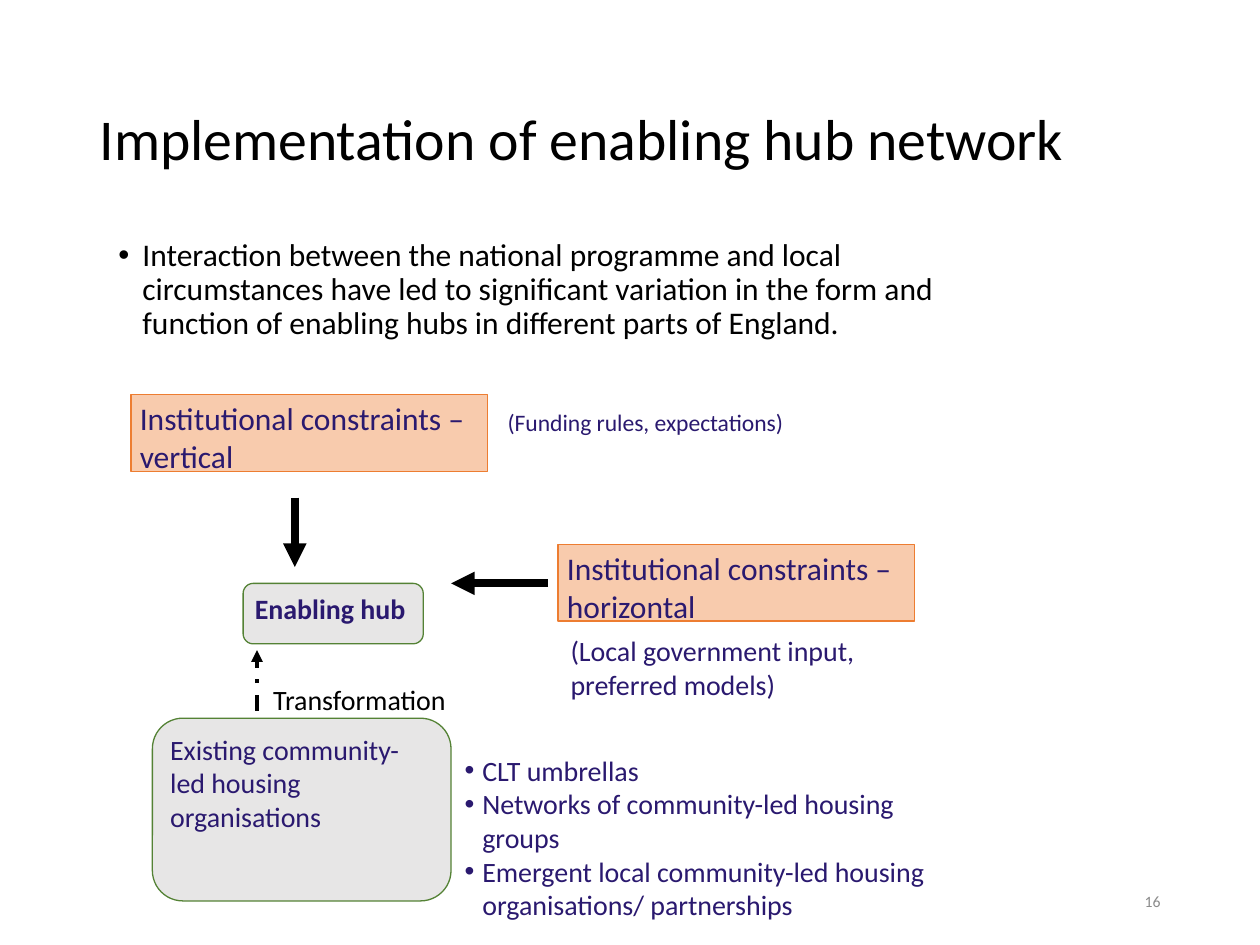
import pptx
import pptx.dml.color
import pptx.enum.dml
import pptx.enum.shapes
import pptx.enum.text
import pptx.oxml.ns
import pptx.util
from lxml import etree

Inches = pptx.util.Inches
Pt = pptx.util.Pt
Shape = pptx.enum.shapes.MSO_SHAPE
Align = pptx.enum.text.PP_ALIGN
Anchor = pptx.enum.text.MSO_ANCHOR
qn = pptx.oxml.ns.qn

BLACK, NAVY, GREY = "000000", "2A196F", "8C8C8C"
PEACH, ORANGE = "F8CBAD", "ED7D31"
SILVER, GREEN = "E7E6E6", "548235"


def color(hex_string):
    return pptx.dml.color.RGBColor.from_string(hex_string)


class HubSlide:
    font = "Calibri"

    def __init__(self, slide):
        self.slide = slide

    def fill_text(self, frame, lines, size, ink, bold=False, align=Align.LEFT,
                  anchor=Anchor.TOP, indent=None, spacing=None, before=0):
        """Fill a text frame, one paragraph per line; an indent makes bullets."""
        frame.word_wrap = True
        frame.auto_size = pptx.enum.text.MSO_AUTO_SIZE.NONE
        frame.vertical_anchor = anchor
        for number, line in enumerate(lines):
            paragraph = frame.add_paragraph() if number else frame.paragraphs[0]
            paragraph.alignment = align
            paragraph.line_spacing = spacing
            paragraph.space_before = Pt(before)
            if indent:
                self.bullet(paragraph, indent)
            run = paragraph.add_run()
            run.text = line
            run.font.name = self.font
            run.font.size = Pt(size)
            run.font.bold = bold
            run.font.color.rgb = color(ink)

    def bullet(self, paragraph, indent):
        properties = paragraph._p.get_or_add_pPr()
        properties.set("marL", str(Inches(indent)))
        properties.set("indent", str(-Inches(indent)))
        etree.SubElement(properties, qn("a:buFont"), typeface="Arial")
        etree.SubElement(properties, qn("a:buChar"), char="•")

    def placeholder(self, index, box, line, size, **style):
        holder = self.slide.placeholders[index]
        holder.left, holder.top, holder.width, holder.height = map(Inches, box)
        self.fill_text(holder.text_frame, [line], size, BLACK, spacing=0.9, **style)

    def label(self, box, lines, size, ink=NAVY, **style):
        textbox = self.slide.shapes.add_textbox(*map(Inches, box))
        self.fill_text(textbox.text_frame, lines, size, ink, **style)

    def block(self, kind, box, line, size, fill, outline, bold=False):
        block = self.slide.shapes.add_shape(kind, *map(Inches, box))
        block.shadow.inherit = False
        block.fill.solid()
        block.fill.fore_color.rgb = color(fill)
        block.line.color.rgb = color(outline)
        block.line.width = Pt(0.75)
        frame = block.text_frame
        frame.margin_left = frame.margin_right = Inches(0.07)
        frame.margin_top = frame.margin_bottom = Inches(0.04)
        self.fill_text(frame, [line], size, NAVY, bold=bold)

    def arrow(self, start, end, width, dash=None):
        arrow = self.slide.shapes.add_connector(
            pptx.enum.shapes.MSO_CONNECTOR.STRAIGHT, *map(Inches, start + end))
        arrow.line.color.rgb = color(BLACK)
        arrow.line.width = Pt(width)
        if dash:
            arrow.line.dash_style = dash
        properties = arrow._element.spPr
        etree.SubElement(properties.find(qn("a:ln")), qn("a:tailEnd"), type="triangle")
        etree.SubElement(properties, qn("a:effectLst"))


def main():
    deck = pptx.Presentation()
    deck.slide_width, deck.slide_height = Inches(10), Inches(7.5)
    hub = HubSlide(deck.slides.add_slide(deck.slide_layouts[1]))

    hub.placeholder(0, (0.69, 0.4, 8.62, 1.45),
                    "Implementation of enabling hub network", 33, anchor=Anchor.MIDDLE)
    hub.placeholder(1, (0.84, 1.85, 7.02, 3.38),
                    "Interaction between the national programme and local circumstances "
                    "have led to significant variation in the form and function of "
                    "enabling hubs in different parts of England.",
                    18, indent=0.19, before=7.5)
    hub.label((7.06, 6.95, 2.25, 0.4), ["16"], 9, GREY,
              align=Align.RIGHT, anchor=Anchor.MIDDLE)

    for direction, left, top in (("vertical", 1.04, 3.13), ("horizontal", 4.43, 4.32)):
        hub.block(Shape.RECTANGLE, (left, top, 2.83, 0.61),
                  f"Institutional constraints – {direction}", 18, PEACH, ORANGE)
    hub.arrow((4.35, 4.63), (3.58, 4.63), 4.5)
    hub.arrow((2.34, 3.95), (2.34, 4.5), 4.5)
    hub.block(Shape.ROUNDED_RECTANGLE, (1.93, 4.63, 1.43, 0.48),
              "Enabling hub", 16, SILVER, GREEN, bold=True)
    hub.label((3.93, 3.19, 2.39, 0.56), ["(Funding rules, expectations)"], 13.5)
    hub.label((4.43, 4.98, 2.83, 0.64), ["(Local government input, preferred models)"], 16)

    hub.block(Shape.ROUNDED_RECTANGLE, (1.21, 5.7, 2.37, 1.45),
              "Existing community-led housing organisations", 16, SILVER, GREEN)
    hub.arrow((2.04, 5.64), (2.04, 5.16), 2.25, pptx.enum.dml.MSO_LINE.DASH_DOT)
    hub.label((2.07, 5.37, 1.79, 0.37), ["Transformation"], 16, BLACK)
    hub.label((3.59, 5.93, 4.1, 1.45),
              ["CLT umbrellas",
               "Networks of community-led housing groups",
               "Emergent local community-led housing organisations/ partnerships"],
              16, indent=0.14)

    deck.save("out.pptx")


if __name__ == "__main__":
    main()
